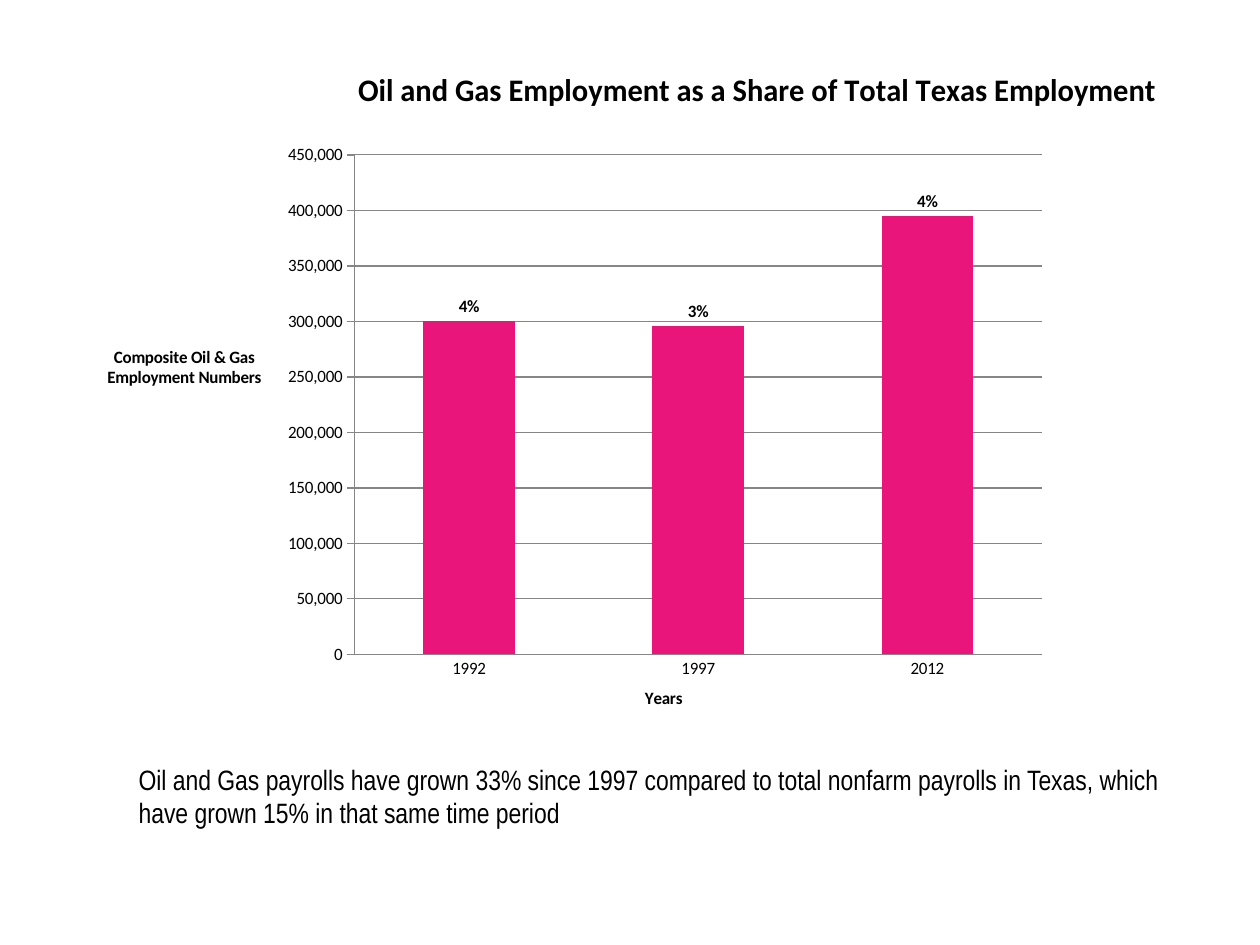
from lxml import etree
from pptx import Presentation
from pptx import util as u
from pptx.chart.data import CategoryChartData
from pptx.dml.color import RGBColor
from pptx.enum import chart as ch, text
from pptx.oxml.ns import qn

PX = u.Inches(1) / 126
BLACK = RGBColor(0, 0, 0)
PINK = RGBColor(0xEA, 0x15, 0x7A)
GRAY = RGBColor(0x86, 0x86, 0x86)


def px(*vals):
    return [u.Emu(round(v * PX)) for v in vals]


def style(font, size=10, bold=False, name="Calibri"):
    font.size, font.bold, font.name = u.Pt(size), bold, name
    font.color.rgb = BLACK


def write(frame, words, align=None, **form):
    par = frame.paragraphs[0]
    par.alignment = align
    run = par.add_run()
    run.text = words
    style(run.font, **form)


def layout(**vals):
    """Make a manual chart layout from shares of the chart's size."""
    root = etree.Element(qn("c:layout"))
    man = etree.SubElement(root, qn("c:manualLayout"))
    if "w" in vals:
        etree.SubElement(man, qn("c:layoutTarget")).set("val", "inner")
    for key in ("x", "y"):
        etree.SubElement(man, qn(f"c:{key}Mode")).set("val", "edge")
    for key, val in vals.items():
        etree.SubElement(man, qn(f"c:{key}")).set("val", str(val))
    return root


def clear(node):
    for old in node.findall(qn("c:layout")):
        node.remove(old)


def head(owner, words, x, y, size=10):
    """Write and place the title of a chart or an axis."""
    title = owner.chart_title if hasattr(owner, "chart_title") else owner.axis_title
    write(title.text_frame, words, size=size, bold=True)
    node = title._element
    clear(node)
    node.find(qn("c:tx")).addnext(layout(x=x, y=y))
    return title


def rule(line):
    line.color.rgb = GRAY
    line.width = u.Pt(0.75)


def add_bars(slide):
    data = CategoryChartData(number_format="General")
    data.categories = ["1992", "1997", "2012"]
    data.add_series("Series 1", [300500, 295700, 394800])
    chart = slide.shapes.add_chart(
        ch.XL_CHART_TYPE.COLUMN_CLUSTERED, *px(94, 42, 1068, 672), data).chart
    style(chart.font)
    chart.has_legend = False
    chart.has_title = True
    head(chart, "Oil and Gas Employment as a Share of Total Texas Employment",
         0.25, 0.03, size=18)

    # Plot frame
    area = chart._chartSpace.chart.plotArea
    clear(area)
    area.insert(0, layout(x=0.25, y=0.17, w=0.67, h=0.75))
    area[0].getparent().replace(
        area[0], layout(x=0.252, y=0.169, w=0.665, h=0.747))

    # Axes
    cat, val = chart.category_axis, chart.value_axis
    head(cat, "Years", 0.53, 0.96)
    side = head(val, "Composite Oil & Gas Employment Numbers", 0.01, 0.45)
    body = side.text_frame._txBody.bodyPr
    body.set("rot", "0")
    body.set("vert", "horz")
    for axis in (cat, val):
        rule(axis.format.line)
        style(axis.tick_labels.font)
        axis.minor_tick_mark = ch.XL_TICK_MARK.NONE
    cat.major_tick_mark = ch.XL_TICK_MARK.NONE
    val.major_tick_mark = ch.XL_TICK_MARK.OUTSIDE
    val.minimum_scale, val.maximum_scale, val.major_unit = 0, 450000, 50000
    val.tick_labels.number_format = "#,##0"
    val.tick_labels.number_format_is_linked = False
    val.has_major_gridlines = True
    rule(val.major_gridlines.format.line)

    # Bars and their labels
    plot = chart.plots[0]
    plot.gap_width = 150
    plot.vary_by_categories = False
    bars = plot.series[0]
    bars.format.fill.solid()
    bars.format.fill.fore_color.rgb = PINK
    labels = bars.data_labels
    labels.show_value = True
    labels.position = ch.XL_LABEL_POSITION.OUTSIDE_END
    style(labels.font, bold=True)
    for i, share in enumerate(["4%", "3%", "4%"]):
        label = bars.points[i].data_label
        write(label.text_frame, share, bold=True)
        label.position = ch.XL_LABEL_POSITION.OUTSIDE_END


def add_note(slide, words):
    title = slide.shapes.title
    title.left, title.top, title.width, title.height = px(126, 756, 1061, 158)
    frame = title.text_frame
    frame.word_wrap = True
    frame.auto_size = text.MSO_AUTO_SIZE.NONE
    frame.vertical_anchor = text.MSO_ANCHOR.TOP
    write(frame, words, align=text.PP_ALIGN.LEFT, size=16, name="Arial Narrow")


def main():
    deck = Presentation()
    deck.slide_width, deck.slide_height = px(1260, 945)
    slide = deck.slides.add_slide(deck.slide_layouts[5])
    add_note(slide, "Oil and Gas payrolls have grown 33% since 1997 compared to "
                    "total nonfarm payrolls in Texas, which have grown 15% in "
                    "that same time period")
    add_bars(slide)
    deck.save("out.pptx")


if __name__ == "__main__":
    main()
